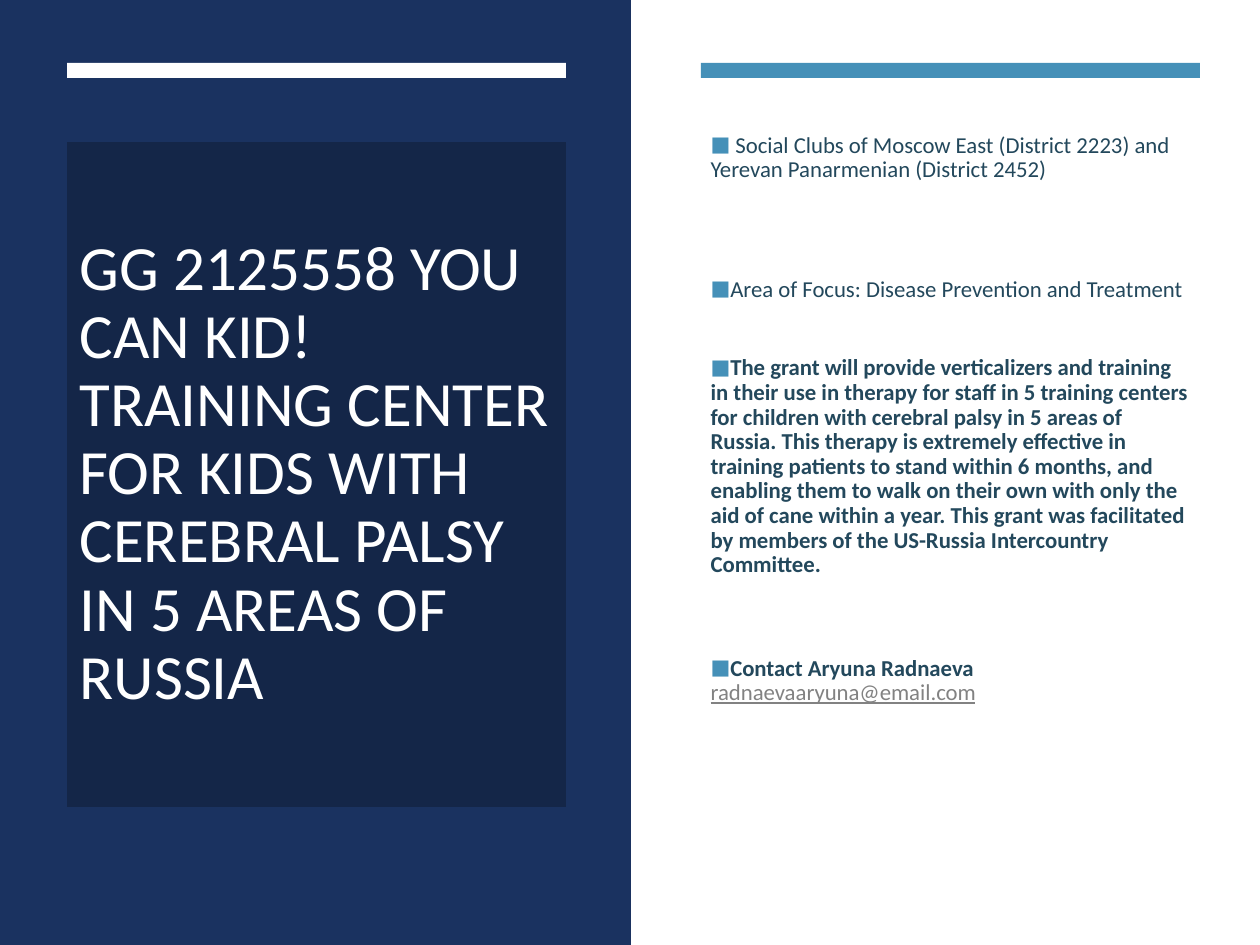
from dataclasses import dataclass

from lxml.etree import SubElement
from pptx import Presentation
from pptx.dml.color import RGBColor
from pptx.enum.shapes import MSO_SHAPE as Shape
from pptx.enum.text import MSO_ANCHOR as Anchor, MSO_AUTO_SIZE as Fit, PP_ALIGN as Align
from pptx.oxml.ns import qn
from pptx.util import Emu, Pt

SCALE = 914400 / 126
WIDE, HIGH = 1260, 945
WHITE, NAVY, DARK, BLUE = "FFFFFF", "1A3260", "142648", "4590B8"
INK, GREY = "23485C", "828282"
FONT = "Calibri"


@dataclass
class Box:
    left: int
    top: int
    width: int
    height: int
    fill: str = ""


@dataclass
class Item:
    text: str
    gap: int = 0
    bold: bool = False
    mail: str = ""


PAGE = Box(0, 0, WIDE, HIGH, WHITE)
PANEL = Box(0, 0, 631, HIGH, NAVY)
TITLE = Box(67, 142, 499, 665, DARK)
BODY = Box(698, 142, 502, 665)
BARS = [Box(67, 63, 499, 15, WHITE), Box(701, 63, 499, 15, BLUE)]

HEAD = "GG 2125558 YOU CAN KID! TRAINING CENTER FOR KIDS WITH CEREBRAL PALSY IN 5 AREAS OF RUSSIA"
ITEMS = [
    Item(" Social Clubs of Moscow East (District 2223) and Yerevan Panarmenian (District 2452)"),
    Item("Area of Focus: Disease Prevention and Treatment", 54),
    Item("The grant will provide verticalizers and training in their use in therapy "
         "for staff in 5 training centers for children with cerebral palsy in 5 areas "
         "of Russia. This therapy is extremely effective in training patients to stand "
         "within 6 months, and enabling them to walk on their own with only the aid of "
         "cane within a year. This grant was facilitated by members of the US-Russia "
         "Intercountry Committee.", 31, True),
    Item("Contact Aryuna Radnaeva ", 45, True, "radnaevaaryuna@email.com"),
]


def px(n: int) -> Emu:
    return Emu(round(n * SCALE))


def rgb(code: str) -> RGBColor:
    return RGBColor.from_string(code)


def paint(shape, code: str) -> None:
    shape.fill.solid()
    shape.fill.fore_color.rgb = rgb(code)


def draw(slide, box: Box) -> None:
    shape = slide.shapes.add_shape(
        Shape.RECTANGLE, px(box.left), px(box.top), px(box.width), px(box.height))
    paint(shape, box.fill)
    shape.line.fill.background()
    shape.shadow.inherit = False


def place(slide, holder, box: Box):
    """Move a placeholder to its box, in front of what is drawn so far."""
    holder.left, holder.top = px(box.left), px(box.top)
    holder.width, holder.height = px(box.width), px(box.height)
    slide.shapes._spTree.append(holder._element)
    frame = holder.text_frame
    frame.word_wrap = True
    frame.auto_size = Fit.NONE
    frame.vertical_anchor = Anchor.MIDDLE
    return frame


def style(para, size: int, code: str, gap: int = 0) -> None:
    para.alignment = Align.LEFT
    para.line_spacing = 0.9
    para.space_before, para.space_after = Pt(gap), Pt(0)
    font = para.font
    font.name, font.size, font.color.rgb = FONT, Pt(size), rgb(code)


def bullet(para) -> None:
    props = para._p.get_or_add_pPr()
    props.set("marL", "0")
    props.set("indent", "0")
    tint = SubElement(props, qn("a:buClr"))
    SubElement(tint, qn("a:srgbClr"), val=BLUE)
    SubElement(props, qn("a:buSzPct"), val="92000")
    SubElement(props, qn("a:buFont"), typeface=FONT)
    SubElement(props, qn("a:buChar"), char="■")


def write(para, item: Item) -> None:
    bullet(para)
    style(para, 13, INK, item.gap)
    run = para.add_run()
    run.text = item.text
    if not item.mail:
        para.font.bold = item.bold
        return
    run.font.bold = item.bold
    link = para.add_run()
    link.text = item.mail
    link.font.underline = True
    link.font.color.rgb = rgb(GREY)


def main() -> None:
    deck = Presentation()
    deck.slide_width, deck.slide_height = px(WIDE), px(HIGH)
    slide = deck.slides.add_slide(deck.slide_layouts[1])
    title, body = slide.placeholders

    for box in (PAGE, PANEL):
        draw(slide, box)

    frame = place(slide, title, TITLE)
    paint(title, TITLE.fill)
    frame.text = HEAD
    style(frame.paragraphs[0], 36, WHITE)

    for bar in BARS:
        draw(slide, bar)

    frame = place(slide, body, BODY)
    frame.margin_bottom = px(116)
    for i, item in enumerate(ITEMS):
        para = frame.add_paragraph() if i else frame.paragraphs[0]
        write(para, item)

    deck.save("out.pptx")


if __name__ == "__main__":
    main()
